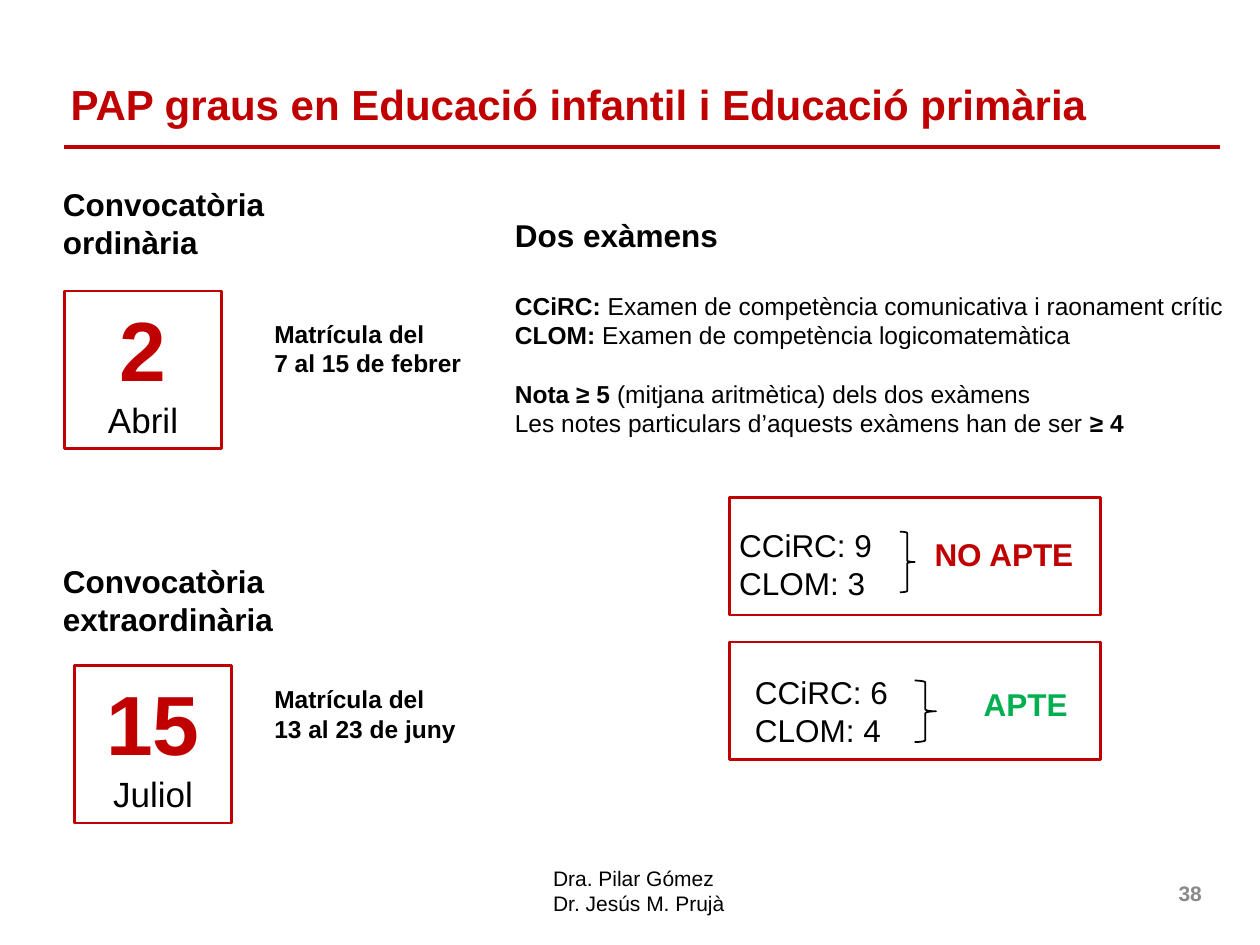
from lxml.etree import SubElement
from pptx import Presentation
from pptx.dml.color import RGBColor
from pptx.enum.shapes import MSO_CONNECTOR, MSO_SHAPE
from pptx.enum.text import MSO_ANCHOR, MSO_AUTO_SIZE, PP_ALIGN
from pptx.oxml.ns import qn
from pptx.util import Cm, Pt

RED, BLACK, GREEN, GREY = "C00000", "000000", "00B050", "898989"


def rgb(color):
    return RGBColor.from_string(color)


def style(font, size, color=BLACK, bold=False):
    font.name = "Arial"
    font.size = Pt(size)
    font.bold = bold
    font.color.rgb = rgb(color)


def add_text(slide, box, text, size, color=BLACK, bold=False,
             anchor=MSO_ANCHOR.TOP, align=PP_ALIGN.LEFT):
    frame = slide.shapes.add_textbox(*map(Cm, box)).text_frame
    frame.word_wrap = True
    frame.vertical_anchor = anchor
    frame.text = text
    for paragraph in frame.paragraphs:
        paragraph.alignment = align
        for run in paragraph.runs:
            style(run.font, size, color, bold)


def add_outline(slide, kind, box, color, width):
    outline = slide.shapes.add_shape(kind, *map(Cm, box))
    outline.shadow.inherit = False
    outline.fill.background()
    outline.line.color.rgb = rgb(color)
    outline.line.width = Pt(width)
    return outline


def add_title(slide, text):
    title = slide.shapes.title
    title.left, title.top, title.width, title.height = map(Cm, (1.17, 1.4, 24.41, 1.4))
    frame = title.text_frame
    frame.auto_size = MSO_AUTO_SIZE.NONE
    frame.vertical_anchor = MSO_ANCHOR.MIDDLE
    frame.text = text
    frame.paragraphs[0].alignment = PP_ALIGN.LEFT
    style(frame.paragraphs[0].runs[0].font, 24, RED, True)


def add_title_rule(slide):
    rule = slide.shapes.add_connector(
        MSO_CONNECTOR.STRAIGHT, Cm(1.3), Cm(2.97), Cm(24.59), Cm(2.97))
    rule.line.color.rgb = rgb(RED)
    rule.line.width = Pt(2.25)
    SubElement(rule._element.spPr, qn("a:effectLst"))


def add_date(slide, left, top, day, month):
    card = add_outline(slide, MSO_SHAPE.RECTANGLE, (left, top, 3.17, 3.17), RED, 1.5)
    frame = card.text_frame
    frame.vertical_anchor = MSO_ANCHOR.TOP
    frame.text = f"{day}\n{month}"
    for paragraph in frame.paragraphs:
        paragraph.alignment = PP_ALIGN.CENTER
    day_line, month_line = frame.paragraphs
    style(day_line.runs[0].font, 48, RED, True)
    style(month_line.runs[0].font, 20)


def add_exams(slide):
    """Each line is a list of (text, bold) runs with its size and space before."""
    lines = [
        (18, 0, [("Dos exàmens", True)]),
        (14, 21, [("CCiRC: ", True),
                  ("Examen de competència comunicativa i raonament crític", False)]),
        (14, 0, [("CLOM: ", True), ("Examen de competència logicomatemàtica", False)]),
        (14, 16.5, [("Nota ≥ 5 ", True),
                    ("(mitjana aritmètica) dels dos exàmens", False)]),
        (14, 0, [("Les notes particulars d’aquests exàmens han de ser ", False),
                 ("≥ 4", True)]),
    ]
    frame = slide.shapes.add_textbox(Cm(10.13), Cm(4.24), Cm(15.44), Cm(4.78)).text_frame
    frame.word_wrap = True
    for number, (size, space, runs) in enumerate(lines):
        paragraph = frame.add_paragraph() if number else frame.paragraphs[0]
        paragraph.space_before = Pt(space)
        for text, bold in runs:
            run = paragraph.add_run()
            run.text = text
            style(run.font, size, bold=bold)


def add_example(slide, top, marks, marks_box, brace_box, verdict, verdict_box, color):
    frame = add_outline(slide, MSO_SHAPE.ROUNDED_RECTANGLE, (14.71, top, 7.47, 2.37), RED, 1.5)
    frame.adjustments[0] = 0
    add_text(slide, marks_box, marks, 18, anchor=MSO_ANCHOR.MIDDLE)
    add_outline(slide, MSO_SHAPE.RIGHT_BRACE, brace_box, BLACK, 1)
    add_text(slide, verdict_box, verdict, 18, color, True)


def main():
    prs = Presentation()
    prs.slide_width, prs.slide_height = Cm(25.4), Cm(19.05)
    slide = prs.slides.add_slide(prs.slide_layouts[5])

    add_title_rule(slide)
    add_title(slide, "PAP graus en Educació infantil i Educació primària")

    add_text(slide, (1.02, 3.61, 5.69, 2.26), "Convocatòria\nordinària", 18, bold=True)
    add_date(slide, 1.3, 5.87, "2", "Abril")
    add_text(slide, (5.28, 6.3, 4.6, 1.45), "Matrícula del\n7 al 15 de febrer", 14, bold=True)

    add_text(slide, (1.02, 11.2, 5.69, 2.03), "Convocatòria\nextraordinària", 18, bold=True)
    add_date(slide, 1.5, 13.42, "15", "Juliol")
    add_text(slide, (5.28, 13.67, 4.6, 1.45), "Matrícula del\n13 al 23 de juny", 14, bold=True)

    add_exams(slide)
    add_example(slide, 10.03, "CCiRC: 9\nCLOM: 3", (14.65, 9.93, 3.4, 2.87),
                (18.14, 10.72, 0.3, 1.22), "NO APTE", (18.59, 10.67, 3.5, 1.02), RED)
    add_example(slide, 12.94, "CCiRC: 6\nCLOM: 4", (14.97, 12.78, 3.4, 3.1),
                (18.44, 13.72, 0.43, 1.24), "APTE", (19.58, 13.69, 2.3, 1.02), GREEN)

    add_text(slide, (10.9, 17.32, 3.99, 1.3), "Dra. Pilar Gómez\nDr. Jesús M. Prujà", 12)
    add_text(slide, (23.29, 17.5, 1.19, 1.02), "38", 12, GREY, True,
             MSO_ANCHOR.MIDDLE, PP_ALIGN.RIGHT)

    prs.save("out.pptx")


if __name__ == "__main__":
    main()
